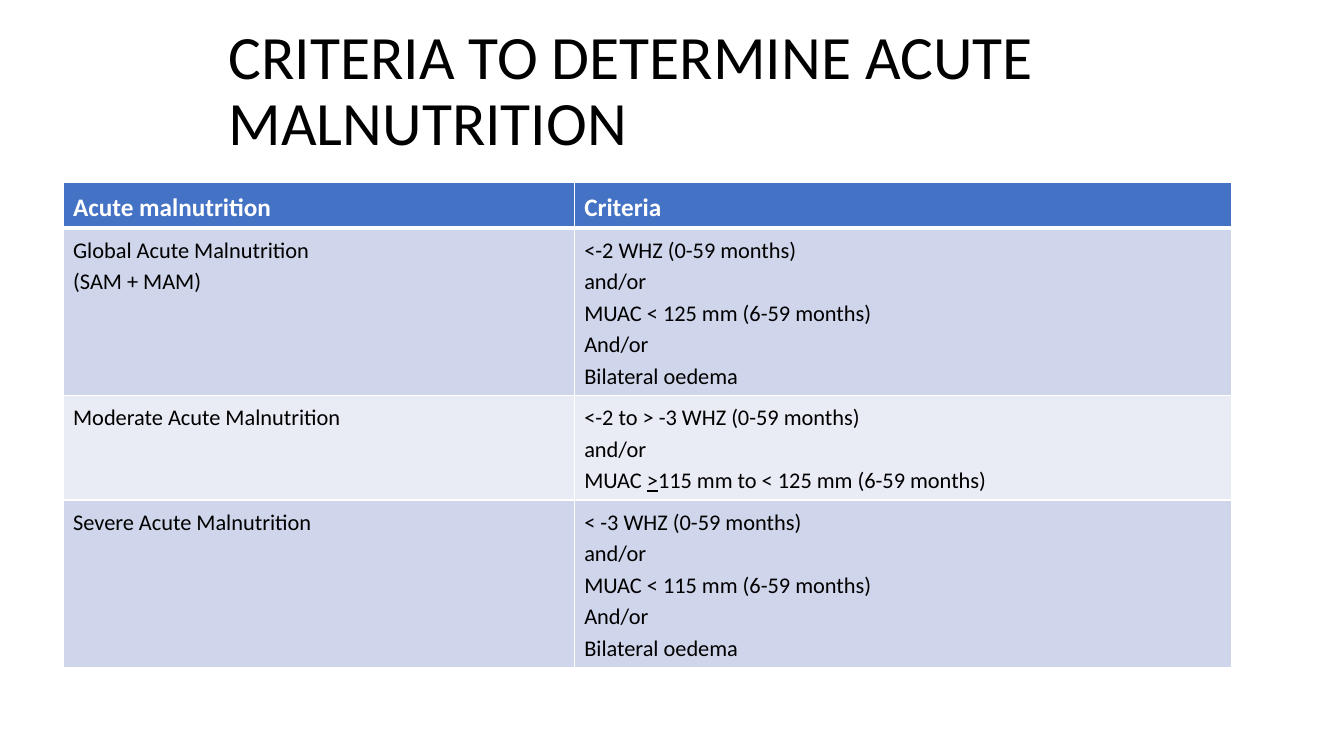
"""Build the slide listing the criteria for acute malnutrition."""
from dataclasses import dataclass

import pptx
import pptx.dml.color
import pptx.enum.text
import pptx.oxml
import pptx.oxml.ns
import pptx.util
from pptx.util import Cm, Pt

TITLE = "CRITERIA TO DETERMINE ACUTE MALNUTRITION"
UNDERLINE_MARK = "_"
ROWS = [
    (["Acute malnutrition"], ["Criteria"]),
    (
        ["Global Acute Malnutrition", "(SAM + MAM)"],
        ["<-2 WHZ (0-59 months)", "and/or", "MUAC < 125 mm (6-59 months)",
         "And/or", "Bilateral oedema"],
    ),
    (
        ["Moderate Acute Malnutrition"],
        ["<-2 to > -3 WHZ (0-59 months)", "and/or",
         "MUAC _>_115 mm to < 125 mm (6-59 months)"],
    ),
    (
        ["Severe Acute Malnutrition"],
        ["< -3 WHZ (0-59 months)", "and/or", "MUAC < 115 mm (6-59 months)",
         "And/or", "Bilateral oedema"],
    ),
]


@dataclass(frozen=True)
class Theme:
    """Hold the colours, type sizes and line widths."""
    font: str = "Calibri"
    title_size: int = 44
    header_size: int = 18
    body_size: int = 16
    text: str = "000000"
    white: str = "FFFFFF"
    header_fill: str = "4472C4"
    bands: tuple = ("CFD5EA", "E9EBF5")
    border: int = 1
    header_border: int = 3


THEME = Theme()
COLUMN_WIDTHS = (12.88, 16.56)
HEADER_HEIGHT, LINE_HEIGHT, CELL_MARGINS = 1.14, 0.79, 0.25


def rgb(value):
    """Return a colour object for a hex value."""
    return pptx.dml.color.RGBColor.from_string(value)


def style(p, size, color, bold, spacing):
    """Set the font and line spacing of a paragraph."""
    p.line_spacing = spacing
    p.font.name = THEME.font
    p.font.size = Pt(size)
    p.font.bold = bold
    p.font.color.rgb = rgb(color)


def add_border(cell, side, width):
    """Draw one white edge of a cell."""
    cell._tc.get_or_add_tcPr().append(pptx.oxml.parse_xml(
        f'<a:ln{side} {pptx.oxml.ns.nsdecls("a")} w="{Pt(width)}"><a:solidFill>'
        f'<a:srgbClr val="{THEME.white}"/></a:solidFill></a:ln{side}>'))


def fill_cell(cell, lines, row):
    """Write the lines of a cell and format it for its row."""
    header = row == 0
    thick_side = {0: "B", 1: "T"}.get(row)
    for side in "LRTB":
        add_border(cell, side, THEME.header_border if side == thick_side else THEME.border)
    cell.fill.solid()
    cell.fill.fore_color.rgb = rgb(THEME.header_fill if header else THEME.bands[(row - 1) % 2])
    tf = cell.text_frame
    for i, line in enumerate(lines):
        p = tf.add_paragraph() if i else tf.paragraphs[0]
        for part, text in enumerate(line.split(UNDERLINE_MARK)):
            r = p.add_run()
            r.text = text
            if part % 2:
                r.font.underline = True
        style(p, THEME.header_size if header else THEME.body_size,
              THEME.white if header else THEME.text, header, 1.15)


def add_title(s):
    """Place and format the title."""
    title = s.shapes.title
    title.left, title.top, title.width, title.height = Cm(5.51), Cm(0.43), Cm(21.44), Cm(3.81)
    tf = title.text_frame
    tf.text = TITLE
    tf.word_wrap = True
    tf.auto_size = pptx.enum.text.MSO_AUTO_SIZE.NONE
    tf.vertical_anchor = pptx.enum.text.MSO_ANCHOR.MIDDLE
    p = tf.paragraphs[0]
    p.alignment = pptx.enum.text.PP_ALIGN.LEFT
    style(p, THEME.title_size, THEME.text, False, 0.9)


def add_criteria_table(s):
    """Add the table with row heights that follow the line counts."""
    heights = [HEADER_HEIGHT] + [
        max(map(len, cells)) * LINE_HEIGHT + CELL_MARGINS for cells in ROWS[1:]]
    table = s.shapes.add_table(
        len(ROWS), len(COLUMN_WIDTHS), Cm(1.59), Cm(4.6),
        Cm(sum(COLUMN_WIDTHS)), Cm(sum(heights))).table
    for column, width in zip(table.columns, COLUMN_WIDTHS):
        column.width = Cm(width)
    for row, (cells, height) in enumerate(zip(ROWS, heights)):
        table.rows[row].height = Cm(height)
        for col, lines in enumerate(cells):
            fill_cell(table.cell(row, col), lines, row)


def main():
    """Create and save the presentation."""
    prs = pptx.Presentation()
    prs.slide_width, prs.slide_height = Cm(33.87), Cm(19.05)
    s = prs.slides.add_slide(prs.slide_layouts.get_by_name("Title Only"))
    add_title(s)
    add_criteria_table(s)
    prs.save("out.pptx")


if __name__ == "__main__":
    main()
